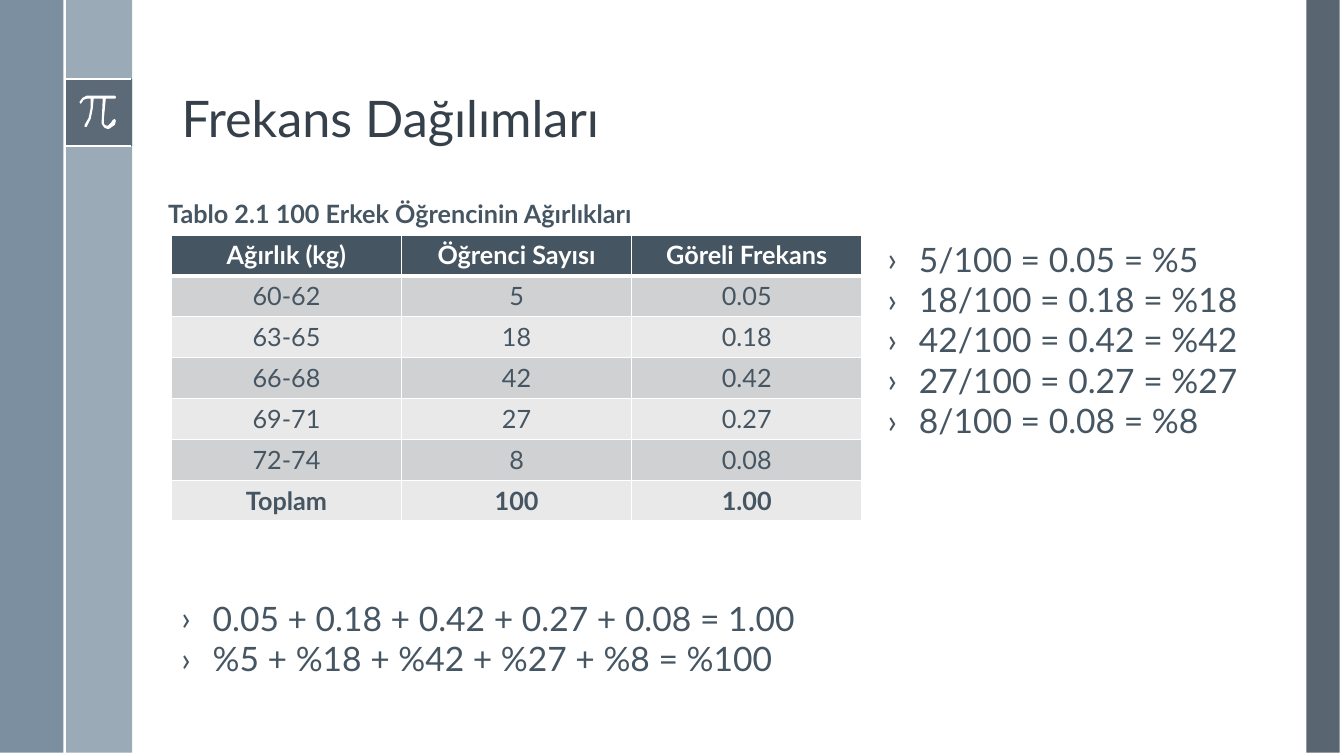
from dataclasses import dataclass

from lxml.etree import SubElement
from pptx import Presentation
from pptx.dml.color import RGBColor
from pptx.enum.shapes import MSO_CONNECTOR, MSO_SHAPE
from pptx.enum.text import MSO_ANCHOR, PP_ALIGN
from pptx.oxml import parse_xml
from pptx.oxml.ns import nsdecls, qn
from pptx.shapes.autoshape import Shape
from pptx.slide import Slide
from pptx.text.text import TextFrame, _Paragraph
from pptx.util import Cm, Pt

WHITE = RGBColor(0xFF, 0xFF, 0xFF)
SLATE = RGBColor(0x47, 0x55, 0x62)
MIST = RGBColor(0x9B, 0xAA, 0xB7)
STEEL = RGBColor(0x6A, 0x80, 0x93)
TITLE_INK = RGBColor(0x35, 0x40, 0x4A)
BODY_INK = RGBColor(0x46, 0x55, 0x62)
DARK_ROW = RGBColor(0xCF, 0xD1, 0xD3)
LIGHT_ROW = RGBColor(0xE9, 0xE9, 0xEA)


@dataclass(frozen=True)
class Box:
    left: float
    top: float
    width: float
    height: float

    def lengths(self) -> tuple[Cm, Cm, Cm, Cm]:
        return Cm(self.left), Cm(self.top), Cm(self.width), Cm(self.height)


@dataclass(frozen=True)
class Panel:
    box: Box
    color: RGBColor
    opacity: int = 100


@dataclass(frozen=True)
class Rule:
    x1: float
    y1: float
    x2: float
    y2: float


@dataclass(frozen=True)
class Calculation:
    box: Box
    lines: tuple[str, ...]


PANELS = (
    Panel(Box(32.92, -0.08, 0.84, 19.05), SLATE, 90),
    Panel(Box(1.63, -0.08, 1.7, 19.05), MIST),
    Panel(Box(-0.1, -0.08, 1.7, 19.05), STEEL, 88),
    Panel(Box(1.63, 1.98, 1.7, 1.7), SLATE, 75),
)
RULES = (
    Rule(1.63, 1.98, 3.31, 1.98),
    Rule(1.63, 3.67, 3.31, 3.67),
    Rule(1.63, -0.08, 1.63, 18.97),
)
PI_OUTLINE = (
    (114, 95), (86, 95), (82, 97), (79, 101), (79, 102), (80, 103), (81, 102),
    (83, 99), (86, 98), (90, 98), (89.5, 107), (88, 117), (84, 124),
    (83.5, 125.5), (85, 126), (86, 126), (90, 118), (92, 108), (93, 98),
    (102, 98), (101, 119), (101, 123), (103, 126), (104.5, 127.3), (107, 128),
    (108, 128), (111, 126.5), (113.5, 123.5), (115, 120), (114, 118),
    (112, 119), (110.5, 122.5), (107, 125), (104, 124), (103, 122),
    (103, 119), (105, 98), (114, 98), (115, 97), (115, 96),
)
WEIGHT_ROWS = (
    ("Ağırlık (kg)", "Öğrenci Sayısı", "Göreli Frekans"),
    ("60-62", "5", "0.05"),
    ("63-65", "18", "0.18"),
    ("66-68", "42", "0.42"),
    ("69-71", "27", "0.27"),
    ("72-74", "8", "0.08"),
    ("Toplam", "100", "1.00"),
)
CALCULATIONS = (
    Calculation(Box(22.12, 5.89, 10.59, 5.38), (
        "5/100 = 0.05 = %5",
        "18/100 = 0.18 = %18",
        "42/100 = 0.42 = %42",
        "27/100 = 0.27 = %27",
        "8/100 = 0.08 = %8",
    )),
    Calculation(Box(4.32, 14.94, 19.71, 2.31), (
        "0.05 + 0.18 + 0.42 + 0.27 + 0.08 = 1.00",
        "%5 + %18 + %42 + %27 + %8 = %100",
    )),
)


def write(paragraph: _Paragraph, text: str, size: int, color: RGBColor,
          bold: bool = False) -> None:
    run = paragraph.add_run()
    run.text = text
    formats = {"name": "Lato", "size": Pt(size), "bold": bold}
    for attribute, value in formats.items():
        setattr(run.font, attribute, value)
    run.font.color.rgb = color


def paint(shape: Shape, color: RGBColor, opacity: int = 100) -> None:
    shape.shadow.inherit = False
    shape.fill.solid()
    shape.fill.fore_color.rgb = color
    shape.line.fill.background()
    if opacity < 100:
        tint = shape.element.spPr.find(qn("a:solidFill")).find(qn("a:srgbClr"))
        SubElement(tint, qn("a:alpha"), val=str(opacity * 1000))


def draw_rule(slide: Slide, rule: Rule) -> None:
    divider = slide.shapes.add_connector(
        MSO_CONNECTOR.STRAIGHT,
        Cm(rule.x1), Cm(rule.y1), Cm(rule.x2), Cm(rule.y2))
    divider.line.color.rgb = WHITE
    divider.line.width = Pt(1.5)
    SubElement(divider.element.spPr, qn("a:effectLst"))


def draw_sidebar(slide: Slide) -> None:
    for panel in PANELS:
        paint(slide.shapes.add_shape(MSO_SHAPE.RECTANGLE, *panel.box.lengths()),
              panel.color, panel.opacity)
    for rule in RULES:
        draw_rule(slide, rule)
    outline = slide.shapes.build_freeform(*PI_OUTLINE[0], scale=Cm(2.54) / 100)
    outline.add_line_segments(PI_OUTLINE[1:], close=True)
    paint(outline.convert_to_shape(), WHITE)


def draw_title(slide: Slide) -> None:
    title = slide.shapes.title
    title.left, title.top, title.width, title.height = Box(
        4.32, 0.43, 27.18, 3.45).lengths()
    title.text_frame.vertical_anchor = MSO_ANCHOR.BOTTOM
    heading = title.text_frame.paragraphs[0]
    formats = {"alignment": PP_ALIGN.LEFT, "line_spacing": 0.9}
    for attribute, value in formats.items():
        setattr(heading, attribute, value)
    write(heading, "Frekans Dağılımları", 36, TITLE_INK)


def add_text(slide: Slide, box: Box) -> TextFrame:
    frame = slide.shapes.add_textbox(*box.lengths()).text_frame
    frame.word_wrap = True
    return frame


def draw_weights(slide: Slide) -> None:
    frame = slide.shapes.add_table(
        len(WEIGHT_ROWS), len(WEIGHT_ROWS[0]), *Box(4.32, 5.92, 17.4, 7.21).lengths())
    last = len(WEIGHT_ROWS) - 1
    for r, row in enumerate(WEIGHT_ROWS):
        header = r == 0
        fill = BODY_INK if header else DARK_ROW if r % 2 else LIGHT_ROW
        for c, text in enumerate(row):
            cell = frame.table.cell(r, c)
            cell.fill.solid()
            cell.fill.fore_color.rgb = fill
            paragraph = cell.text_frame.paragraphs[0]
            paragraph.alignment = PP_ALIGN.CENTER
            write(paragraph, text, 18, WHITE if header else BODY_INK, r in (0, last))
    for r, row in enumerate(frame.element.iter(qn("a:tr"))):
        widths = {"lnL": 1, "lnR": 1, "lnT": 3 if r == 1 else 1, "lnB": 1 if r else 3}
        for properties in row.iter(qn("a:tcPr")):
            for position, (side, width) in enumerate(widths.items()):
                properties.insert(position, parse_xml(
                    f'<a:{side} {nsdecls("a")} w="{Pt(width)}"><a:solidFill>'
                    f'<a:srgbClr val="{WHITE}"/></a:solidFill></a:{side}>'))


def draw_calculation(slide: Slide, calculation: Calculation) -> None:
    frame = add_text(slide, calculation.box)
    for i, line in enumerate(calculation.lines):
        paragraph = frame.add_paragraph() if i else frame.paragraphs[0]
        write(paragraph, line, 24, BODY_INK)
        properties = paragraph._p.get_or_add_pPr()
        properties.set("marL", str(Cm(0.79)))
        properties.set("indent", str(-Cm(0.79)))
        SubElement(properties, qn("a:buFont"), typeface="Lato")
        SubElement(properties, qn("a:buChar"), char="›")


def main() -> None:
    deck = Presentation()
    deck.slide_width, deck.slide_height = Cm(33.87), Cm(19.05)
    slide = deck.slides.add_slide(deck.slide_layouts[5])
    draw_sidebar(slide)
    draw_title(slide)
    draw_weights(slide)
    caption = add_text(slide, Box(3.99, 4.88, 13, 1.02))
    write(caption.paragraphs[0], "Tablo 2.1 100 Erkek Öğrencinin Ağırlıkları", 18, BODY_INK, True)
    for calculation in CALCULATIONS:
        draw_calculation(slide, calculation)
    deck.save("out.pptx")


if __name__ == "__main__":
    main()
